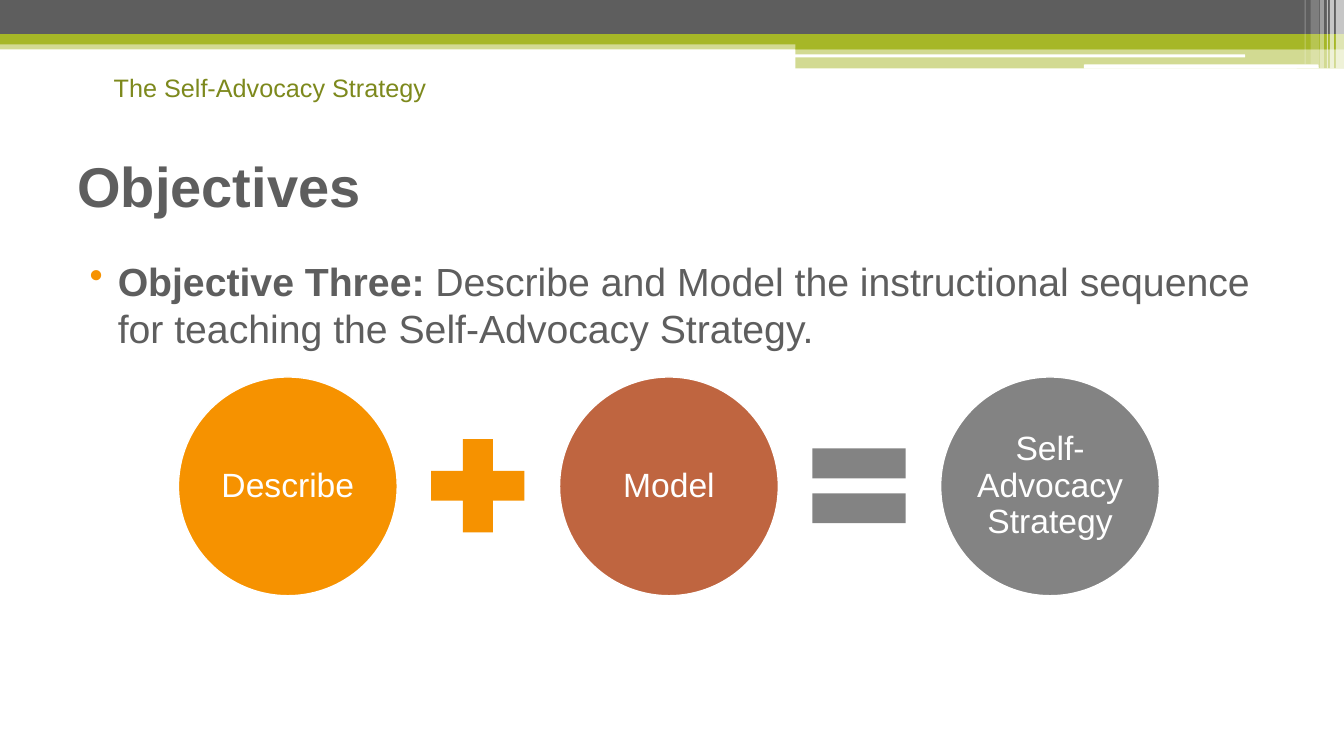
from lxml import etree
from pptx import Presentation
from pptx.dml.color import RGBColor
from pptx.enum.shapes import MSO_SHAPE
from pptx.enum.text import MSO_ANCHOR, PP_ALIGN
from pptx.oxml.ns import qn
from pptx.util import Emu, Pt

RECT, ROUNDED, OVAL = MSO_SHAPE.RECTANGLE, MSO_SHAPE.ROUNDED_RECTANGLE, MSO_SHAPE.OVAL
PLUS, EQUAL = MSO_SHAPE.MATH_PLUS, MSO_SHAPE.MATH_EQUAL
TOP, MIDDLE = MSO_ANCHOR.TOP, MSO_ANCHOR.MIDDLE
CENTER = PP_ALIGN.CENTER

EMU_PER_PX = 9144  # 100 px to the inch
FONT = "Arial"
COLORS = {
    "white": "FFFFFF",
    "green": "A6B727",
    "olive": "7D891D",
    "dark": "5E5E5E",
    "orange": "F69200",
    "rust": "BF6540",
    "gray": "838383",
}


def px(length):
    return Emu(length * EMU_PER_PX)


def rgb(name):
    return RGBColor.from_string(COLORS[name])


class SlideBuilder:
    def __init__(self, page):
        self.page = page

    def shape(self, kind, left, top, width, height, color, opacity=100):
        shape = self.page.shapes.add_shape(kind, px(left), px(top), px(width), px(height))
        shape.shadow.inherit = False
        shape.fill.solid()
        shape.fill.fore_color.rgb = rgb(color)
        shape.line.fill.background()
        if opacity < 100:
            tint = shape.fill._xPr.find(qn("a:solidFill"))[0]
            etree.SubElement(tint, qn("a:alpha")).set("val", str(opacity * 1000))
        return shape

    def style(self, paragraph, size, color, bold=None):
        font = paragraph.font
        font.name, font.size, font.bold = FONT, Pt(size), bold
        font.color.rgb = rgb(color)

    def text(self, left, top, width, height, spans, size, color,
             bold=None, anchor=TOP, wrap=True):
        box = self.page.shapes.add_textbox(px(left), px(top), px(width), px(height))
        frame = box.text_frame
        frame.word_wrap = wrap
        frame.vertical_anchor = anchor
        para = frame.paragraphs[0]
        for words, span_bold in spans:
            span = para.add_run()
            span.text = words
            if span_bold:
                span.font.bold = True
        self.style(para, size, color, bold)
        return frame

    def bullet(self, paragraph, color, indent, hanging):
        props = paragraph._p.get_or_add_pPr()
        props.set("marL", str(px(indent)))
        props.set("indent", str(-px(hanging)))
        tint = etree.Element(qn("a:buClr"))
        etree.SubElement(tint, qn("a:srgbClr")).set("val", COLORS[color])
        mark = etree.Element(qn("a:buChar"))
        mark.set("char", "•")
        props.insert(0, tint)
        props.insert(1, mark)

    def circle(self, left, top, size, words, color):
        circle = self.shape(OVAL, left, top, size, size, color)
        circle.line.color.rgb = rgb("white")
        circle.line.width = Pt(1)
        frame = circle.text_frame
        frame.word_wrap = True
        frame.vertical_anchor = MIDDLE
        frame.margin_left = frame.margin_right = px(3)
        frame.margin_top = frame.margin_bottom = px(3)
        para = frame.paragraphs[0]
        para.text = words
        para.alignment = CENTER
        para.line_spacing = 0.9
        self.style(para, 24, "white")


def main():
    deck = Presentation()
    deck.slide_width, deck.slide_height = px(1333), px(750)
    slide = SlideBuilder(deck.slides.add_slide(deck.slide_layouts[6]))

    # Header bands
    for left, top, width, height, color, opacity in (
        (0, 40, 1333, 9, "green", 50),
        (0, 0, 1333, 34, "dark", 100),
        (0, 34, 1333, 10, "green", 100),
        (789, 39, 544, 10, "green", 100),
        (789, 48, 544, 20, "green", 50),
    ):
        slide.shape(RECT, left, top, width, height, color, opacity)

    # White slits in the bands
    for left, top, width, height in ((788, 54, 447, 3), (1075, 64, 233, 4)):
        slide.shape(ROUNDED, left, top, width, height, "white")

    # Pale stripes at the right edge
    for left, width, height, opacity in (
        (1325, 8, 68, 65),
        (1319, 4, 68, 65),
        (1316, 1, 68, 60),
        (1309, 4, 68, 40),
        (1300, 8, 64, 20),
        (1294, 1, 64, 30),
    ):
        slide.shape(RECT, left, 0, width, height, "white", opacity)

    # Running head, title and objective
    slide.text(103, 67, 333, 40, [("The Self-Advocacy Strategy", False)],
               18, "olive", wrap=False)
    slide.text(67, 125, 1200, 117, [("Objectives", False)],
               40, "dark", bold=True, anchor=MIDDLE)
    objective = slide.text(67, 246, 1224, 90, [
        ("Objective Three: ", True),
        ("Describe and Model the instructional sequence "
         "for teaching the Self-Advocacy Strategy.", False),
    ], 28, "dark")
    objective.margin_top = px(9)
    slide.bullet(objective.paragraphs[0], "orange", 40, 28)

    # Equation: circles with an operator centred in each gap
    first, top, circle_size, operator_size, pitch = 177, 374, 217, 126, 378
    operator_shift = (pitch + circle_size - operator_size) // 2
    operator_top = top + (circle_size - operator_size) // 2
    for step, (words, color, operator, operator_color) in enumerate((
        ("Describe", "orange", PLUS, "orange"),
        ("Model", "rust", EQUAL, "gray"),
        ("Self-Advocacy Strategy", "gray", None, None),
    )):
        left = first + step * pitch
        slide.circle(left, top, circle_size, words, color)
        if operator:
            slide.shape(operator, left + operator_shift, operator_top,
                        operator_size, operator_size, operator_color)

    deck.save("out.pptx")


if __name__ == "__main__":
    main()
